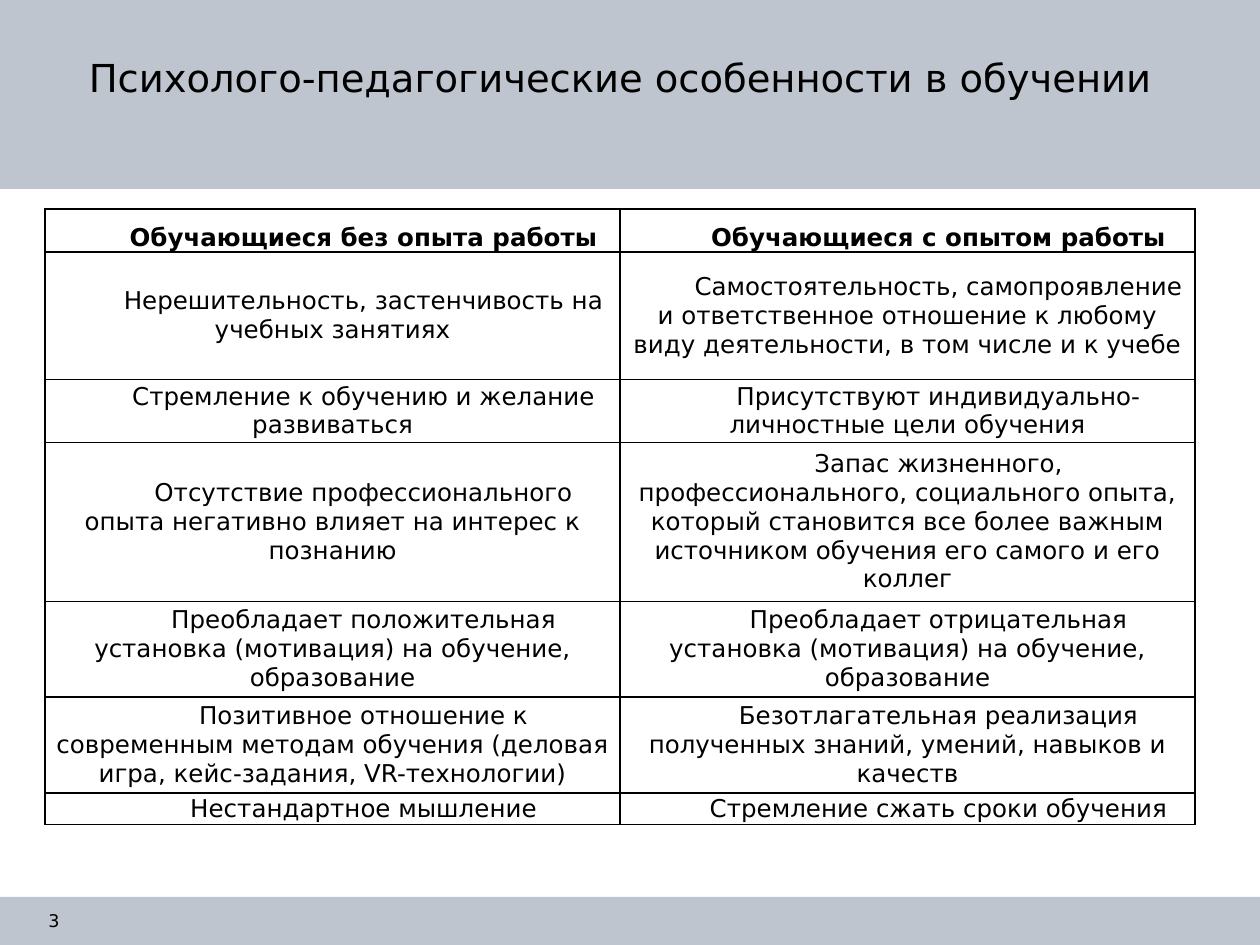
from pptx import Presentation
from pptx.dml.color import RGBColor
from pptx.enum.shapes import MSO_SHAPE
from pptx.enum.text import MSO_ANCHOR, MSO_AUTO_SIZE, PP_ALIGN
from pptx.oxml import parse_xml
from pptx.oxml.ns import nsdecls
from pptx.util import Cm, Pt

FONT = "DejaVu Sans"
BLACK = "000000"
BAND = "BFC5CE"


def color(value):
    return RGBColor.from_string(value)


def write(frame, text, size, align, bold=False):
    frame.text = text
    para = frame.paragraphs[0]
    para.alignment = align
    span = para.runs[0]
    span.font.name = FONT
    span.font.size = Pt(size)
    span.font.bold = bold
    span.font.color.rgb = color(BLACK)
    return para


deck = Presentation()
deck.slide_width = Cm(25.4)
deck.slide_height = Cm(19.05)
page = deck.slides.add_slide(deck.slide_layouts[5])

# Header and footer bands
for top, height in [(0, 3.81), (18.08, 0.97)]:
    band = page.shapes.add_shape(
        MSO_SHAPE.RECTANGLE, 0, Cm(top), deck.slide_width, Cm(height))
    band.shadow.inherit = False
    band.fill.solid()
    band.fill.fore_color.rgb = color(BAND)
    band.line.fill.background()

# Slide number
number = page.shapes.add_textbox(Cm(0.56), Cm(18.34), Cm(0.64), Cm(0.43))
frame = number.text_frame
frame.margin_left = frame.margin_right = frame.margin_top = frame.margin_bottom = 0
frame.vertical_anchor = MSO_ANCHOR.MIDDLE
frame.word_wrap = True
write(frame, "3", 10, PP_ALIGN.RIGHT)

# Title, brought in front of the header band
title = page.shapes.title
title.left, title.top, title.width, title.height = Cm(0.64), Cm(0.97), Cm(23.72), Cm(2.84)
title.text_frame.auto_size = MSO_AUTO_SIZE.NONE
title.text_frame.vertical_anchor = MSO_ANCHOR.TOP
write(title.text_frame, "Психолого-педагогические особенности в обучении", 22, PP_ALIGN.CENTER)
page.shapes._spTree.append(title._element)

# Comparison table: row height in cm, then the two cells
rows = [
    (0.64, "Обучающиеся без опыта работы", "Обучающиеся с опытом работы"),
    (2.57, "Нерешительность, застенчивость на учебных занятиях",
     "Самостоятельность, самопроявление и ответственное отношение к любому "
     "виду деятельности, в том числе и к учебе"),
    (1.27, "Стремление к обучению и желание развиваться",
     "Присутствуют индивидуально-личностные цели обучения"),
    (3.2, "Отсутствие профессионального опыта негативно влияет на интерес к познанию",
     "Запас жизненного, профессионального, социального опыта, который становится "
     "все более важным источником обучения его самого и его коллег"),
    (1.93, "Преобладает положительная установка (мотивация) на обучение, образование",
     "Преобладает отрицательная установка (мотивация) на обучение, образование"),
    (1.93, "Позитивное отношение к современным методам обучения "
     "(деловая игра, кейс-задания, VR-технологии)",
     "Безотлагательная реализация полученных знаний, умений, навыков и качеств"),
    (0.64, "Нестандартное мышление", "Стремление сжать сроки обучения"),
]
table_height = sum(height for height, *_ in rows)
table = page.shapes.add_table(
    len(rows), 2, Cm(0.91), Cm(4.21), Cm(23.18), Cm(table_height)).table
table.horz_banding = False

for row_index, (height, *texts) in enumerate(rows):
    is_header = row_index == 0
    table.rows[row_index].height = Cm(height)
    for column_index, text in enumerate(texts):
        cell = table.cell(row_index, column_index)
        cell.margin_left = cell.margin_right = Cm(0.16)
        cell.margin_top = cell.margin_bottom = 0
        cell.vertical_anchor = MSO_ANCHOR.MIDDLE
        para = write(cell.text_frame, text, 14, PP_ALIGN.CENTER, is_header)
        para.line_spacing = 1.5 if is_header else 1.0
        # First-line indent
        para_properties = para._p.get_or_add_pPr()
        para_properties.set("marL", "0")
        para_properties.set("indent", str(Cm(1.25)))
        # Borders on all four sides
        cell_properties = cell._tc.get_or_add_tcPr()
        for side in ("lnL", "lnR", "lnT", "lnB"):
            cell_properties.append(parse_xml(
                f'<a:{side} {nsdecls("a")} w="{Pt(1)}"><a:solidFill>'
                f'<a:srgbClr val="{BLACK}"/></a:solidFill></a:{side}>'))
        cell.fill.background()

deck.save("out.pptx")
